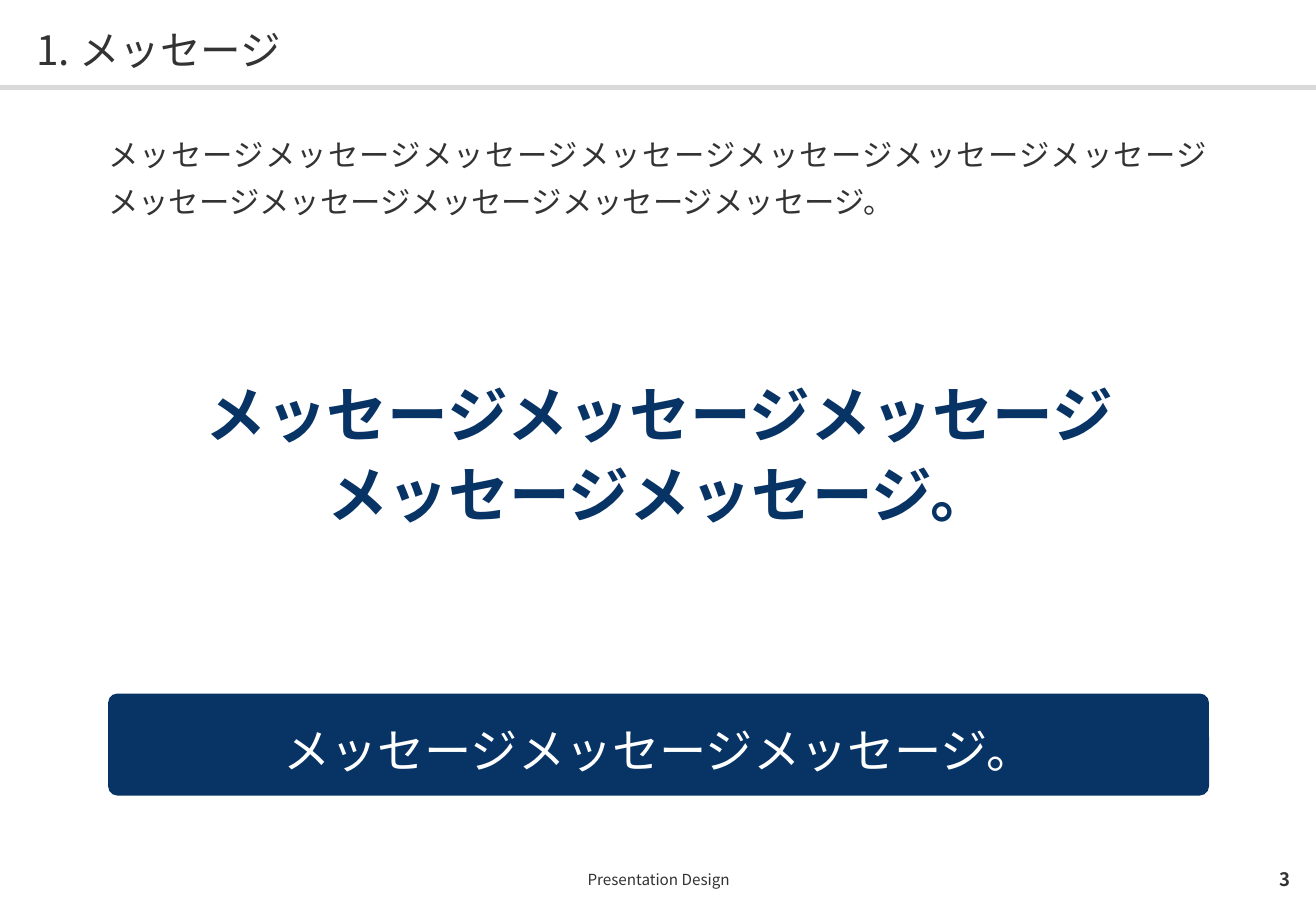
from dataclasses import dataclass
from typing import Optional

import pptx
import pptx.dml.color
import pptx.enum.shapes
import pptx.enum.text
import pptx.oxml
import pptx.oxml.ns
import pptx.shapes.autoshape
import pptx.slide
import pptx.util

EMU_PER_PX = 9144  # 100 px to the inch
SLIDE_WIDTH, SLIDE_HEIGHT = 1083, 750
FONT = "Noto Sans CJK JP"
NAVY, DARK, GREY, WHITE = "073365", "333333", "D9D9D9", "FFFFFF"
WORD = "メッセージ"

Align = pptx.enum.text.PP_ALIGN
Anchor = pptx.enum.text.MSO_ANCHOR
Preset = pptx.enum.shapes.MSO_SHAPE
Shape = pptx.shapes.autoshape.Shape


@dataclass(frozen=True)
class Box:
    left: int
    top: int
    width: int
    height: int

    def emu(self) -> tuple[int, int, int, int]:
        return px(self.left), px(self.top), px(self.width), px(self.height)


@dataclass(frozen=True)
class TextBlock:
    """Text in a plain text box, or in a rounded panel when corner is given."""
    box: Box
    lines: tuple[str, ...]
    size: int
    color: str = DARK
    bold: bool = False
    align: Align = Align.CENTER
    anchor: Anchor = Anchor.MIDDLE
    spacing: float = 1.0
    insets: tuple[int, int, int, int] = (0, 0, 0, 0)
    corner: Optional[float] = None
    fill: Optional[str] = None


TEXT_BLOCKS = (
    TextBlock(Box(30, 17, 1024, 43), (f"1. {WORD}",), 24, align=Align.LEFT, spacing=1.1),
    TextBlock(Box(89, 103, 905, 76), (WORD * 12 + "。",), 18, align=Align.JUSTIFY,
              anchor=Anchor.TOP, spacing=1.3, corner=0),
    TextBlock(Box(90, 304, 905, 133), (WORD * 3, WORD * 2 + "。"), 36, NAVY, True,
              anchor=Anchor.TOP, spacing=1.1, corner=0),
    TextBlock(Box(89, 571, 906, 84), (WORD * 3 + "。",), 28, WHITE, spacing=1.1,
              insets=(20, 16, 20, 12), corner=0.09, fill=NAVY),
    TextBlock(Box(89, 710, 906, 28), ("Presentation Design",), 9),
    TextBlock(Box(1010, 710, 52, 28), ("3",), 11, bold=True, align=Align.RIGHT),
)


def px(length: int) -> int:
    return pptx.util.Emu(length * EMU_PER_PX)


def rgb(color: str) -> pptx.dml.color.RGBColor:
    return pptx.dml.color.RGBColor.from_string(color)


def write_text(shape: Shape, lines: tuple[str, ...], *, size: int, color: str,
               bold: bool, align: Align, anchor: Anchor, spacing: float,
               insets: tuple[int, int, int, int]) -> None:
    """Fill a shape with one paragraph a line; insets run left, top, right, bottom."""
    frame = shape.text_frame
    frame.word_wrap = True
    frame.vertical_anchor = anchor
    (frame.margin_left, frame.margin_top,
     frame.margin_right, frame.margin_bottom) = map(px, insets)
    frame.text = "\n".join(lines)
    for paragraph in frame.paragraphs:
        paragraph.alignment = align
        paragraph.line_spacing = spacing
        for run in paragraph.runs:
            run.font.name = FONT
            run.font.size = pptx.util.Pt(size)
            run.font.bold = bold
            run.font.color.rgb = rgb(color)
            east_asian = pptx.oxml.parse_xml(
                f'<a:ea {pptx.oxml.ns.nsdecls("a")} typeface="{FONT}"/>')
            run.font._element.find(pptx.oxml.ns.qn("a:latin")).addnext(east_asian)


def add_panel(slide: pptx.slide.Slide, preset: Preset, box: Box, fill: Optional[str]) -> Shape:
    panel = slide.shapes.add_shape(preset, *box.emu())
    panel.shadow.inherit = False
    panel.line.fill.background()
    if fill is None:
        panel.fill.background()
    else:
        panel.fill.solid()
        panel.fill.fore_color.rgb = rgb(fill)
    return panel


def add_text_block(slide: pptx.slide.Slide, block: TextBlock) -> None:
    if block.corner is None:
        holder = slide.shapes.add_textbox(*block.box.emu())
    else:
        holder = add_panel(slide, Preset.ROUNDED_RECTANGLE, block.box, block.fill)
        holder.adjustments[0] = block.corner
        holder.text_frame.auto_size = pptx.enum.text.MSO_AUTO_SIZE.SHAPE_TO_FIT_TEXT
    write_text(holder, block.lines, size=block.size, color=block.color, bold=block.bold,
               align=block.align, anchor=block.anchor, spacing=block.spacing,
               insets=block.insets)


def main() -> None:
    presentation = pptx.Presentation()
    presentation.slide_width = px(SLIDE_WIDTH)
    presentation.slide_height = px(SLIDE_HEIGHT)
    slide = presentation.slides.add_slide(presentation.slide_layouts[6])

    add_panel(slide, Preset.RECTANGLE, Box(0, 70, SLIDE_WIDTH, 4), GREY)
    for block in TEXT_BLOCKS:
        add_text_block(slide, block)

    presentation.save("out.pptx")


if __name__ == "__main__":
    main()
